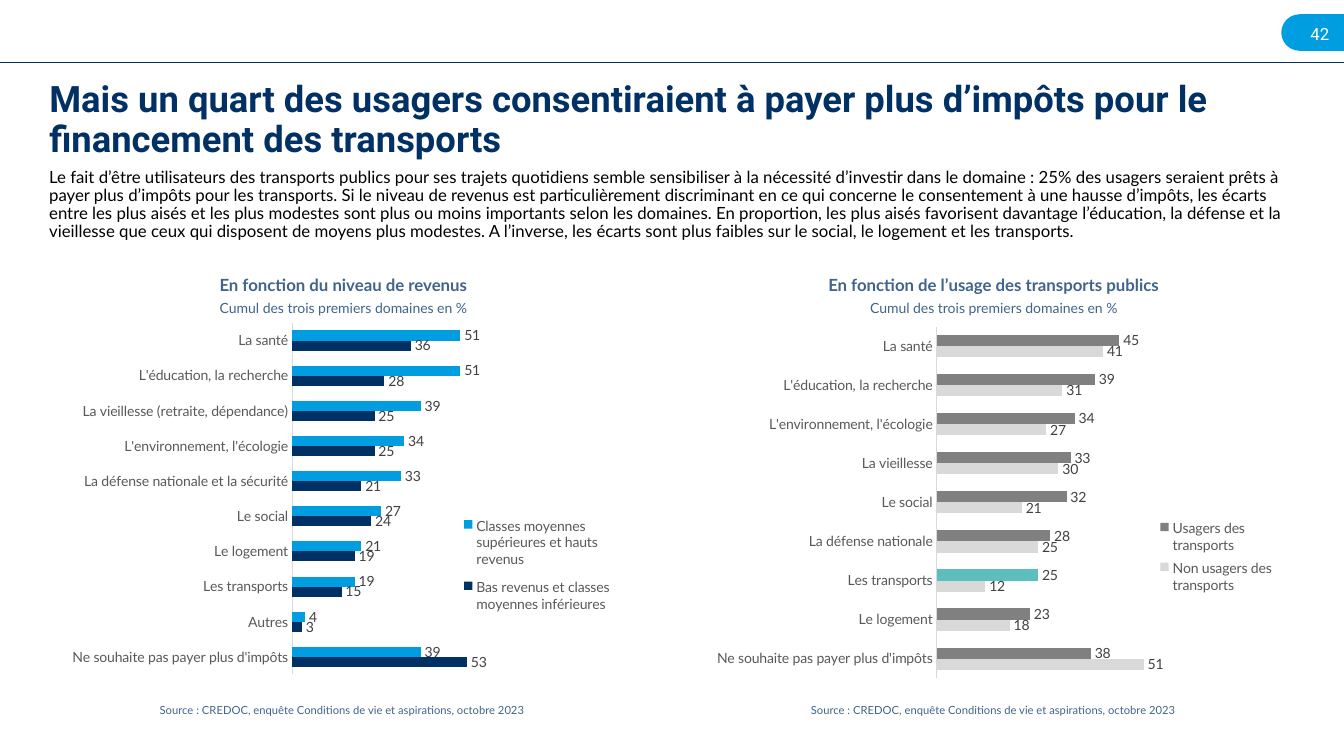
from dataclasses import dataclass

from pptx import Presentation
from pptx.chart.data import CategoryChartData
from pptx.dml.color import RGBColor
from pptx.enum.chart import XL_CHART_TYPE, XL_LABEL_POSITION, XL_LEGEND_POSITION, XL_TICK_LABEL_POSITION, XL_TICK_MARK
from pptx.enum.shapes import MSO_CONNECTOR, MSO_SHAPE
from pptx.enum.text import MSO_ANCHOR, MSO_AUTO_SIZE, PP_ALIGN
from pptx.oxml import parse_xml
from pptx.oxml.ns import nsdecls, qn
from pptx.util import Cm, Pt

NAVY = RGBColor(0x00, 0x30, 0x64)
SLATE = RGBColor(0x40, 0x64, 0x8B)
BLUE = RGBColor(0x00, 0x9E, 0xE0)
TEAL = RGBColor(0x5D, 0xBE, 0xBF)
BLACK = RGBColor(0x00, 0x00, 0x00)
WHITE = RGBColor(0xFF, 0xFF, 0xFF)
DARK = RGBColor(0x40, 0x40, 0x40)
TEXT = RGBColor(0x59, 0x59, 0x59)
GREY = RGBColor(0x80, 0x80, 0x80)
PALE = RGBColor(0xD9, 0xD9, 0xD9)

WIDTH = 33.87
HEIGHT = 19.05

TITLE = "Mais un quart des usagers consentiraient à payer plus d’impôts pour le financement des transports"
INTRO = (
    "Le fait d’être utilisateurs des transports publics pour ses trajets quotidiens semble sensibiliser "
    "à la nécessité d’investir dans le domaine : 25% des usagers seraient prêts à payer plus d’impôts pour "
    "les transports. Si le niveau de revenus est particulièrement discriminant en ce qui concerne le "
    "consentement à une hausse d’impôts, les écarts entre les plus aisés et les plus modestes sont plus ou "
    "moins importants selon les domaines. En proportion, les plus aisés favorisent davantage l’éducation, "
    "la défense et la vieillesse que ceux qui disposent de moyens plus modestes. A l’inverse, les écarts "
    "sont plus faibles sur le social, le logement et les transports."
)
UNIT = "Cumul des trois premiers domaines en %"
SOURCE = "Source : CREDOC, enquête Conditions de vie et aspirations, octobre 2023"


@dataclass
class Box:
    left: float
    top: float
    width: float
    height: float

    def place(self) -> tuple:
        return Cm(self.left), Cm(self.top), Cm(self.width), Cm(self.height)


@dataclass
class Style:
    size: float
    color: RGBColor
    face: str = "Lato"
    bold: bool = False
    align: PP_ALIGN = PP_ALIGN.CENTER
    anchor: MSO_ANCHOR = MSO_ANCHOR.MIDDLE


@dataclass
class Series:
    name: str
    color: RGBColor
    accent: int | None = None


@dataclass
class Panel:
    head: str
    left: float
    foot: float
    chart: Box
    plot: tuple
    key: tuple
    series: list[Series]
    rows: list[tuple]


PANELS = [
    Panel(
        "En fonction du niveau de revenus", 1.38, 1.5, Box(1.38, 7.67, 14.55, 9.8),
        (0.411, 0.048, 0.343, 0.904), (0.69, 0.52, 0.29, 0.3),
        [Series("Bas revenus et classes moyennes inférieures", NAVY),
         Series("Classes moyennes supérieures et hauts revenus", BLUE)],
        [("Ne souhaite pas payer plus d'impôts", 53, 39),
         ("Autres", 3, 4),
         ("Les transports", 15, 19),
         ("Le logement", 19, 21),
         ("Le social", 24, 27),
         ("La défense nationale et la sécurité", 21, 33),
         ("L'environnement, l'écologie", 25, 34),
         ("La vieillesse (retraite, dépendance)", 25, 39),
         ("L'éducation, la recherche", 28, 51),
         ("La santé", 36, 51)],
    ),
    Panel(
        "En fonction de l’usage des transports publics", 17.77, 17.91, Box(17.77, 8.05, 14.55, 9.42),
        (0.401, 0.019, 0.422, 0.941), (0.78, 0.52, 0.21, 0.23),
        [Series("Non usagers des transports", PALE),
         Series("Usagers des transports", GREY, 2)],
        [("Ne souhaite pas payer plus d'impôts", 51, 38),
         ("Le logement", 18, 23),
         ("Les transports", 12, 25),
         ("La défense nationale", 25, 28),
         ("Le social", 21, 32),
         ("La vieillesse", 30, 33),
         ("L'environnement, l'écologie", 27, 34),
         ("L'éducation, la recherche", 31, 39),
         ("La santé", 41, 45)],
    ),
]


def set_font(font, style: Style) -> None:
    font.name = style.face
    font.size = Pt(style.size)
    font.bold = style.bold
    font.color.rgb = style.color


def fill_text(shape, text: str, style: Style) -> None:
    frame = shape.text_frame
    frame.text = text
    frame.word_wrap = True
    frame.auto_size = MSO_AUTO_SIZE.NONE
    frame.vertical_anchor = style.anchor
    line = frame.paragraphs[0]
    line.alignment = style.align
    line.line_spacing = 0.9
    set_font(line.font, style)


def add_text(slide, box: Box, text: str, style: Style) -> None:
    fill_text(slide.shapes.add_textbox(*box.place()), text, style)


def add_layout(node, index: int, frame: tuple, inner: bool = False) -> None:
    for old in node.findall(qn("c:layout")):
        node.remove(old)
    target = '<c:layoutTarget val="inner"/>' if inner else ""
    modes = "".join(f'<c:{axis}Mode val="edge"/>' for axis in "xy")
    sizes = "".join(f'<c:{tag} val="{part}"/>' for tag, part in zip("xywh", frame))
    xml = f'<c:layout {nsdecls("c")}><c:manualLayout>{target}{modes}{sizes}</c:manualLayout></c:layout>'
    node.insert(index, parse_xml(xml))


def add_bars(slide, panel: Panel) -> None:
    data = CategoryChartData()
    names, *values = zip(*panel.rows)
    data.categories = names
    for item, column in zip(panel.series, values):
        data.add_series(item.name, column)
    chart = slide.shapes.add_chart(XL_CHART_TYPE.BAR_CLUSTERED, *panel.chart.place(), data).chart
    chart.has_title = False
    set_font(chart.font, Style(10, TEXT))

    axis = chart.category_axis
    axis.major_tick_mark = XL_TICK_MARK.NONE
    axis.minor_tick_mark = XL_TICK_MARK.NONE
    axis.tick_label_position = XL_TICK_LABEL_POSITION.NEXT_TO_AXIS
    axis.format.line.color.rgb = PALE
    axis.format.line.width = Pt(0.75)
    set_font(axis.tick_labels.font, Style(10, TEXT))
    scale = chart.value_axis
    scale.minimum_scale = 0
    scale.maximum_scale = 60
    scale.has_major_gridlines = False
    scale.visible = False

    plot = chart.plots[0]
    plot.gap_width = 150
    plot.overlap = 0
    plot.vary_by_categories = False
    for item, bars in zip(panel.series, plot.series):
        bars.format.fill.solid()
        bars.format.fill.fore_color.rgb = item.color
        if item.accent is not None:
            fill = bars.points[item.accent].format.fill
            fill.solid()
            fill.fore_color.rgb = TEAL
        labels = bars.data_labels
        labels.show_value = True
        labels.position = XL_LABEL_POSITION.OUTSIDE_END
        set_font(labels.font, Style(10, DARK))

    chart.has_legend = True
    legend = chart.legend
    legend.position = XL_LEGEND_POSITION.RIGHT
    legend.include_in_layout = False
    set_font(legend.font, Style(10, TEXT))
    add_layout(legend._element, 1, panel.key)
    add_layout(chart._chartSpace.chart.plotArea, 0, panel.plot, True)


def add_header(slide) -> None:
    tab = slide.shapes.add_shape(MSO_SHAPE.ROUNDED_RECTANGLE, *Box(32.29, 0.36, 5.13, 0.92).place())
    tab.adjustments[0] = 0.5
    tab.shadow.inherit = False
    tab.fill.solid()
    tab.fill.fore_color.rgb = BLUE
    tab.line.fill.background()
    add_text(slide, Box(32.25, 0.46, 1.5, 0.84), "42", Style(12, WHITE, "Roboto", align=PP_ALIGN.RIGHT))
    rule = slide.shapes.add_connector(MSO_CONNECTOR.STRAIGHT, 0, Cm(1.57), Cm(WIDTH), Cm(1.57))
    rule.line.color.rgb = NAVY
    rule.line.width = Pt(1)
    rule._element.spPr.append(parse_xml(f'<a:effectLst {nsdecls("a")}/>'))


def main() -> None:
    deck = Presentation()
    deck.slide_width = Cm(WIDTH)
    deck.slide_height = Cm(HEIGHT)
    slide = deck.slides.add_slide(deck.slide_layouts[5])
    add_header(slide)
    title = slide.shapes.title
    title.left, title.top, title.width, title.height = Box(0.99, 1.98, 31.65, 2.13).place()
    fill_text(title, TITLE, Style(26, NAVY, "Roboto", True, PP_ALIGN.LEFT))
    add_text(slide, Box(0.99, 4.13, 31.65, 2.13), INTRO,
             Style(12, BLACK, align=PP_ALIGN.LEFT, anchor=MSO_ANCHOR.TOP))
    for panel in PANELS:
        add_text(slide, Box(panel.left, 6.91, 14.55, 0.58), panel.head, Style(12, SLATE, bold=True))
        add_text(slide, Box(panel.left, 7.5, 14.55, 0.58), UNIT, Style(10, SLATE))
        add_bars(slide, panel)
        add_text(slide, Box(panel.foot, 17.7, 14.25, 0.41), SOURCE, Style(8, SLATE))
    deck.save("out.pptx")


if __name__ == "__main__":
    main()
